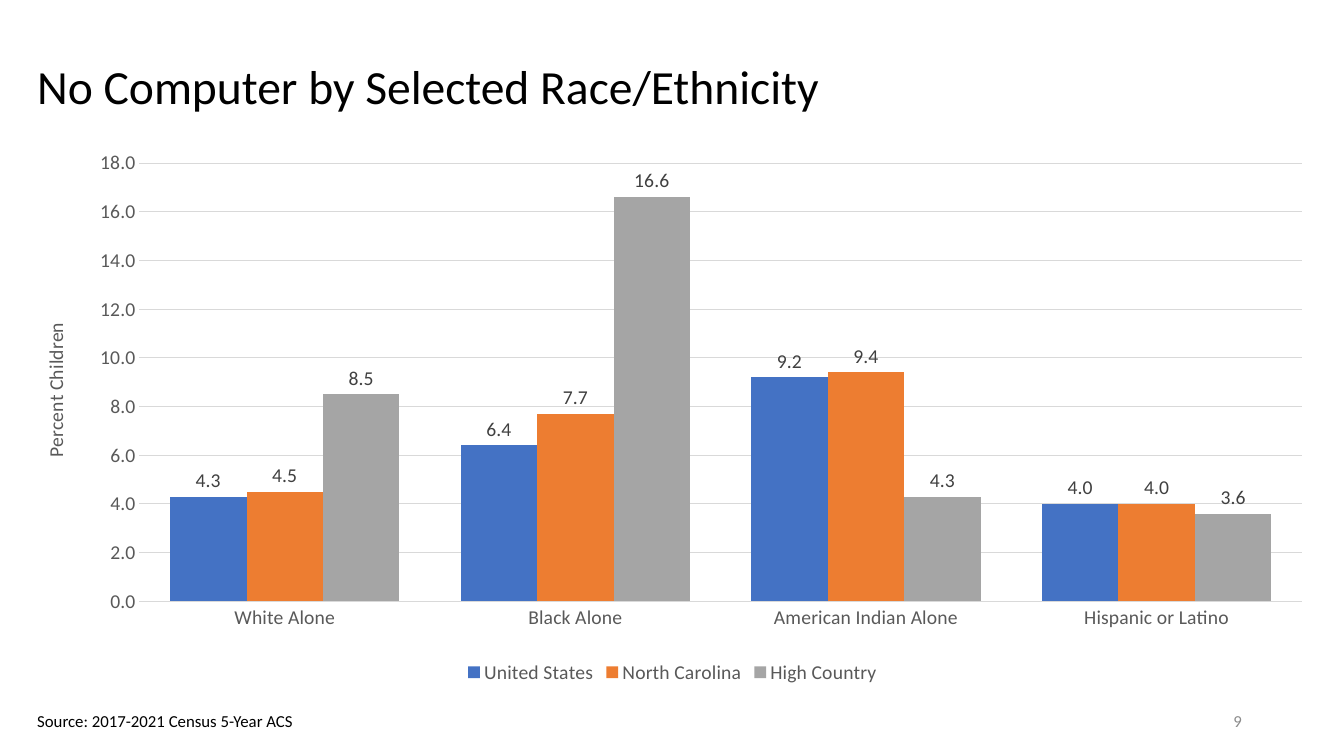
"""Build a slide with a clustered column chart of children without a computer."""
from dataclasses import dataclass

from lxml import etree
from pptx import Presentation
from pptx.chart.data import CategoryChartData
from pptx.dml.color import RGBColor
from pptx.enum.chart import XL_CHART_TYPE, XL_LABEL_POSITION, XL_LEGEND_POSITION, XL_TICK_MARK
from pptx.enum.text import MSO_ANCHOR, PP_ALIGN
from pptx.util import Emu, Inches, Pt

CLUSTERED = XL_CHART_TYPE.COLUMN_CLUSTERED
OUTSIDE_END = XL_LABEL_POSITION.OUTSIDE_END
BOTTOM = XL_LEGEND_POSITION.BOTTOM
NO_TICK = XL_TICK_MARK.NONE
TOP, MIDDLE = MSO_ANCHOR.TOP, MSO_ANCHOR.MIDDLE
LEFT, RIGHT = PP_ALIGN.LEFT, PP_ALIGN.RIGHT

WIDTH, HEIGHT = Inches(13.33), Inches(7.5)
COLUMNS, ROWS = 160, 90
FONT = "Calibri"
BLACK, GREY, PALE, LABEL, NUMBER = "000000", "595959", "D9D9D9", "404040", "8C8C8C"
NUMBER_FORMAT = "#,##0.0"
CHART_TEXT = 14
PLOT_SHARES = {"x": 0.087, "y": 0.035, "w": 0.901, "h": 0.805}


@dataclass(frozen=True)
class Area:
    column: float
    row: float
    columns: float
    rows: float

    def lengths(self) -> tuple[Emu, Emu, Emu, Emu]:
        across, down = WIDTH / COLUMNS, HEIGHT / ROWS
        return (Emu(round(self.column * across)), Emu(round(self.row * down)),
                Emu(round(self.columns * across)), Emu(round(self.rows * down)))


@dataclass(frozen=True)
class Region:
    name: str
    color: str
    values: tuple[float, ...]


CATEGORIES = ("White Alone", "Black Alone", "American Indian Alone", "Hispanic or Latino")
REGIONS = (
    Region("United States", "4472C4", (4.3, 6.4, 9.2, 4.0)),
    Region("North Carolina", "ED7D31", (4.5, 7.7, 9.4, 4.0)),
    Region("High Country", "A5A5A5", (8.5, 16.6, 4.3, 3.6)),
)


def rgb(color: str) -> RGBColor:
    return RGBColor.from_string(color)


def set_font(font, size: float, color: str) -> None:
    font.name, font.size, font.bold = FONT, Pt(size), False
    font.color.rgb = rgb(color)


def add_text(page, text: str, area: Area, *, size: float = 12, color: str = BLACK,
             anchor=TOP, align=LEFT, wrap: bool = True, spacing: float = 1.0) -> None:
    frame = page.shapes.add_textbox(*area.lengths()).text_frame
    frame.word_wrap = wrap
    frame.vertical_anchor = anchor
    para = frame.paragraphs[0]
    para.alignment, para.line_spacing = align, spacing
    span = para.add_run()
    span.text = text
    set_font(span.font, size, color)


def place_plot(chart) -> None:
    plot_area = chart.plots[0]._element.getparent()
    namespace = etree.QName(plot_area).namespace
    for old in plot_area.findall(f"{{{namespace}}}layout"):
        plot_area.remove(old)
    layout = etree.Element(f"{{{namespace}}}layout")
    manual = etree.SubElement(layout, f"{{{namespace}}}manualLayout")
    settings = {"layoutTarget": "inner", "xMode": "edge", "yMode": "edge", **PLOT_SHARES}
    for tag, value in settings.items():
        etree.SubElement(manual, f"{{{namespace}}}{tag}").set("val", str(value))
    plot_area.insert(0, layout)


def style_axes(chart) -> None:
    for axis in (chart.category_axis, chart.value_axis):
        axis.major_tick_mark = axis.minor_tick_mark = NO_TICK
        set_font(axis.tick_labels.font, CHART_TEXT, GREY)
    values = chart.value_axis
    values.minimum_scale, values.maximum_scale, values.major_unit = 0, 18, 2
    values.tick_labels.number_format = NUMBER_FORMAT
    values.tick_labels.number_format_is_linked = False
    values.format.line.fill.background()
    for line in (chart.category_axis.format.line, values.major_gridlines.format.line):
        line.color.rgb, line.width = rgb(PALE), Pt(0.75)
    frame = values.axis_title.text_frame
    span = frame.paragraphs[0].add_run()
    span.text = "Percent Children"
    set_font(span.font, CHART_TEXT, GREY)
    direction = frame._txBody.bodyPr
    direction.set("rot", "-5400000")
    direction.set("vert", "horz")


def add_region_chart(page, area: Area) -> None:
    data = CategoryChartData(number_format=NUMBER_FORMAT)
    data.categories = CATEGORIES
    for region in REGIONS:
        data.add_series(region.name, region.values)
    chart = page.shapes.add_chart(CLUSTERED, *area.lengths(), data).chart
    chart.has_title = False
    set_font(chart.font, CHART_TEXT, BLACK)
    chart.has_legend = True
    chart.legend.position, chart.legend.include_in_layout = BOTTOM, False
    set_font(chart.legend.font, CHART_TEXT, GREY)
    plot = chart.plots[0]
    plot.gap_width, plot.overlap, plot.vary_by_categories = 80, 0, False
    for series, region in zip(plot.series, REGIONS):
        series.format.fill.solid()
        series.format.fill.fore_color.rgb = rgb(region.color)
        labels = series.data_labels
        labels.show_value, labels.position = True, OUTSIDE_END
        labels.number_format, labels.number_format_is_linked = NUMBER_FORMAT, False
        set_font(labels.font, CHART_TEXT, LABEL)
    style_axes(chart)
    place_plot(chart)


def main() -> None:
    deck = Presentation()
    deck.slide_width, deck.slide_height = WIDTH, HEIGHT
    page = deck.slides.add_slide(deck.slide_layouts[6])
    add_text(page, "No Computer by Selected Race/Ethnicity", Area(3.24, 4.08, 153.12, 13.08),
             size=34, anchor=MIDDLE, spacing=0.9)
    add_text(page, "9", Area(113.04, 83.4, 36, 4.8), color=NUMBER, anchor=MIDDLE, align=RIGHT)
    add_text(page, "Source: 2017-2021 Census 5-Year ACS", Area(3.24, 84, 33.36, 3.6), wrap=False)
    add_region_chart(page, Area(3.24, 17.16, 153.6, 64.8))
    deck.save("out.pptx")


if __name__ == "__main__":
    main()
